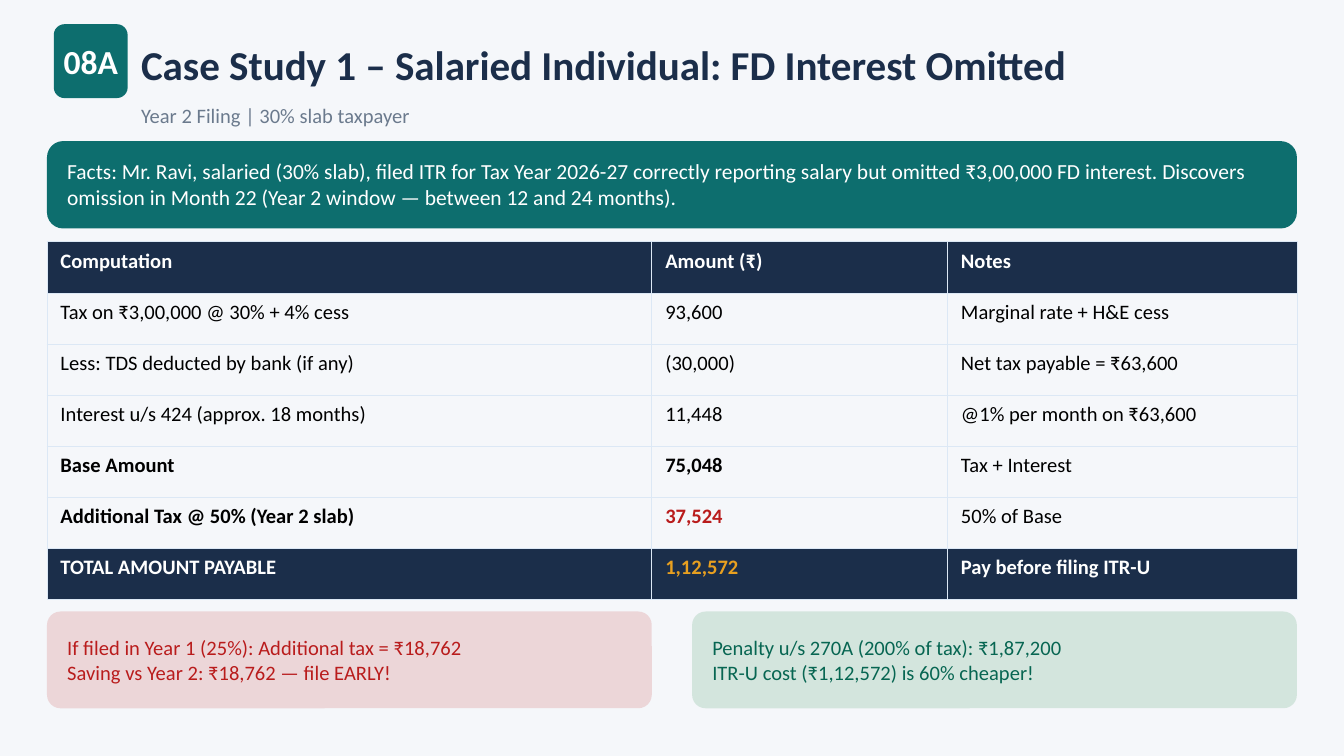
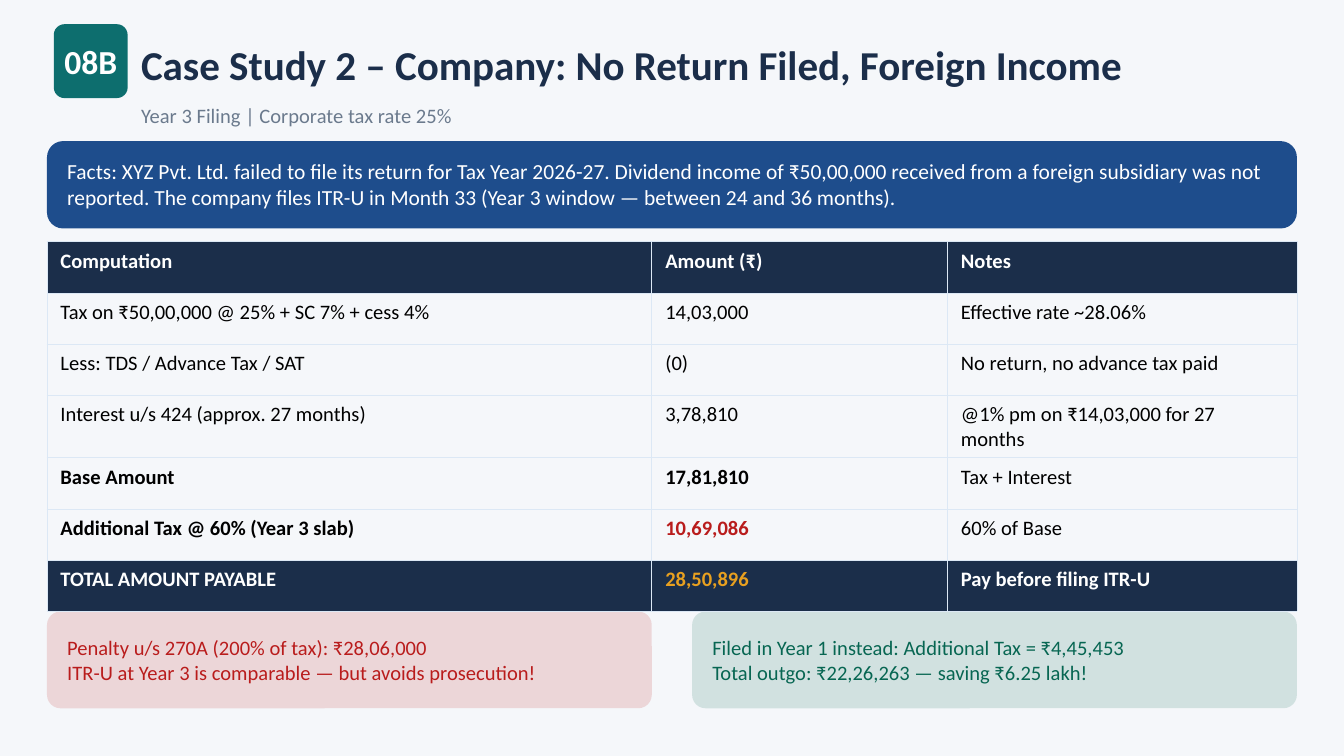
import pptx
import pptx.util
import pptx.dml.color
import pptx.enum.shapes
import pptx.enum.text
import pptx.oxml
import pptx.oxml.ns

PX = 4572
FONT = "Calibri"
C = {
    "bg": "F5F7FA", "teal": "0D6E6E", "navy": "1B2E4A", "grey": "6B7A8D",
    "blue": "1E4D8C", "white": "FFFFFF", "black": "000000", "red": "B91C1C",
    "amber": "E8A020", "green": "15803D", "pine": "076652", "rule": "DCE8F5",
}
RGB = {k: pptx.dml.color.RGBColor.from_string(v) for k, v in C.items()}
NS = pptx.oxml.ns.nsdecls("a")
ALIGN = pptx.enum.text.PP_ALIGN
MIDDLE = pptx.enum.text.MSO_ANCHOR.MIDDLE
ROUNDED = pptx.enum.shapes.MSO_SHAPE.ROUNDED_RECTANGLE


def write(tf, lines, size, colour, bold=False, align=ALIGN.LEFT):
    for i, line in enumerate(lines):
        p = tf.paragraphs[0] if i == 0 else tf.add_paragraph()
        p.alignment = align
        r = p.add_run()
        r.text = line
        for k, v in {"name": FONT, "size": pptx.util.Pt(size), "bold": bold}.items():
            setattr(r.font, k, v)
        r.font.color.rgb = RGB[colour]


def panel(s, box, radius, colour, alpha=100):
    sp = s.shapes.add_shape(ROUNDED, *[v * PX for v in box])
    sp.adjustments[0] = radius / min(box[2:])
    sp.shadow.inherit = False
    sp.fill.solid()
    sp.fill.fore_color.rgb = RGB[colour]
    sp.line.fill.background()
    if alpha < 100:
        clr = sp.fill._xPr.find(".//" + pptx.oxml.ns.qn("a:srgbClr"))
        clr.append(pptx.oxml.parse_xml(f'<a:alpha {NS} val="{alpha * 1000}"/>'))


BADGE = (80, 36, 110, 110)
HEADER = ("Computation", "Amount (₹)", "Notes")
COLS = (900, 440, 520)
ROW_H = 76

cases = [
    {
        "badge": "08A",
        "title": "Case Study 1 – Salaried Individual: FD Interest Omitted",
        "subtitle": "Year 2 Filing | 30% slab taxpayer",
        "facts": "Facts: Mr. Ravi, salaried (30% slab), filed ITR for Tax Year 2026-27 correctly "
                 "reporting salary but omitted ₹3,00,000 FD interest. Discovers omission in "
                 "Month 22 (Year 2 window — between 12 and 24 months).",
        "band": "teal",
        "rows": [
            ("Tax on ₹3,00,000 @ 30% + 4% cess", "93,600", "Marginal rate + H&E cess"),
            ("Less: TDS deducted by bank (if any)", "(30,000)", "Net tax payable = ₹63,600"),
            ("Interest u/s 424 (approx. 18 months)", "11,448", "@1% per month on ₹63,600"),
            ("Base Amount", "75,048", "Tax + Interest"),
            ("Additional Tax @ 50% (Year 2 slab)", "37,524", "50% of Base"),
            ("TOTAL AMOUNT PAYABLE", "1,12,572", "Pay before filing ITR-U"),
        ],
        "notes": [
            ("red", "red", ["If filed in Year 1 (25%): Additional tax = ₹18,762",
                            "Saving vs Year 2: ₹18,762 — file EARLY!"]),
            ("green", "pine", ["Penalty u/s 270A (200% of tax): ₹1,87,200",
                               "ITR-U cost (₹1,12,572) is 60% cheaper!"]),
        ],
    },
    {
        "badge": "08B",
        "title": "Case Study 2 – Company: No Return Filed, Foreign Income",
        "subtitle": "Year 3 Filing | Corporate tax rate 25%",
        "facts": "Facts: XYZ Pvt. Ltd. failed to file its return for Tax Year 2026-27. Dividend "
                 "income of ₹50,00,000 received from a foreign subsidiary was not reported. The "
                 "company files ITR-U in Month 33 (Year 3 window — between 24 and 36 months).",
        "band": "blue",
        "rows": [
            ("Tax on ₹50,00,000 @ 25% + SC 7% + cess 4%", "14,03,000", "Effective rate ~28.06%"),
            ("Less: TDS / Advance Tax / SAT", "(0)", "No return, no advance tax paid"),
            ("Interest u/s 424 (approx. 27 months)", "3,78,810", "@1% pm on ₹14,03,000 for 27 months"),
            ("Base Amount", "17,81,810", "Tax + Interest"),
            ("Additional Tax @ 60% (Year 3 slab)", "10,69,086", "60% of Base"),
            ("TOTAL AMOUNT PAYABLE", "28,50,896", "Pay before filing ITR-U"),
        ],
        "notes": [
            ("red", "red", ["Penalty u/s 270A (200% of tax): ₹28,06,000",
                            "ITR-U at Year 3 is comparable — but avoids prosecution!"]),
            ("pine", "pine", ["Filed in Year 1 instead: Additional Tax = ₹4,45,453",
                              "Total outgo: ₹22,26,263 — saving ₹6.25 lakh!"]),
        ],
    },
]

prs = pptx.Presentation()
prs.slide_width = 2000 * PX
prs.slide_height = 1125 * PX

for case in cases:
    s = prs.slides.add_slide(prs.slide_layouts[6])
    s.background.fill.solid()
    s.background.fill.fore_color.rgb = RGB["bg"]

    panel(s, BADGE, 16, "teal")
    panel(s, (70, 210, 1860, 130), 24, case["band"])
    texts = [
        (BADGE, [case["badge"]], 18, "white", True, ALIGN.CENTER),
        ((210, 40, 1720, 110), [case["title"]], 22, "navy", True),
        ((210, 144, 1720, 56), [case["subtitle"]], 11, "grey"),
        ((100, 216, 1820, 116), [case["facts"]], 11.5, "white"),
    ]
    for i, (fill, ink, lines) in enumerate(case["notes"]):
        x = 70 + i * 960
        panel(s, (x, 910, 900, 144), 20, fill, 15)
        texts.append(((x + 30, 916, 840, 132), lines, 11, ink))

    for box, *content in texts:
        tf = s.shapes.add_textbox(*[v * PX for v in box]).text_frame
        for side in ("left", "top", "right", "bottom"):
            setattr(tf, f"margin_{side}", 0)
        tf.word_wrap = True
        tf.vertical_anchor = MIDDLE
        write(tf, *content)

    rows = [HEADER, *case["rows"]]
    last = len(rows) - 1
    tbl = s.shapes.add_table(len(rows), len(COLS), 70 * PX, 360 * PX,
                             sum(COLS) * PX, len(rows) * ROW_H * PX).table
    tbl.first_row = tbl.horz_banding = False
    for col, width in zip(tbl.columns, COLS):
        col.width = width * PX
    for i, row in enumerate(rows):
        tbl.rows[i].height = ROW_H * PX
        dark = i in (0, last)
        for j, value in enumerate(row):
            cell = tbl.cell(i, j)
            tcPr = cell._tc.get_or_add_tcPr()
            for edge in "LRTB":
                tcPr.append(pptx.oxml.parse_xml(
                    f'<a:ln{edge} {NS} w="6350"><a:solidFill>'
                    f'<a:srgbClr val="{C["rule"]}"/></a:solidFill></a:ln{edge}>'))
            if dark:
                cell.fill.solid()
                cell.fill.fore_color.rgb = RGB["navy"]
            else:
                cell.fill.background()
            colour = "white" if dark else "black"
            if j == 1:
                colour = {last - 1: "red", last: "amber"}.get(i, colour)
            bold = dark or (i >= last - 2 and j < 2)
            write(cell.text_frame, [value], 11, colour, bold)

prs.save("out.pptx")
